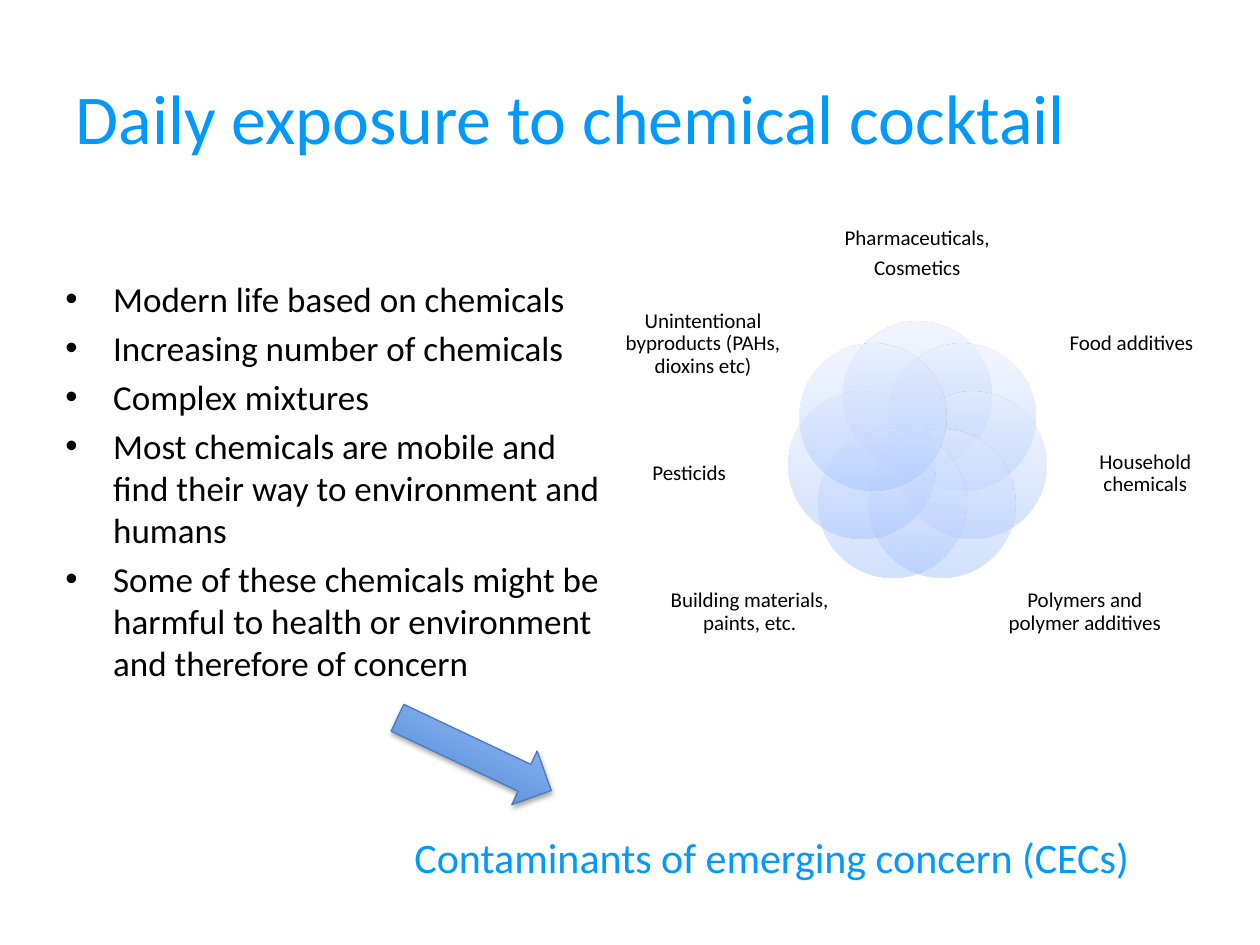
from dataclasses import dataclass
from math import cos, radians, sin

from lxml.etree import SubElement
from pptx import Presentation
from pptx.dml.color import RGBColor
from pptx.enum.shapes import MSO_SHAPE as Shape
from pptx.enum.text import MSO_ANCHOR as Anchor, PP_ALIGN as Align
from pptx.oxml.ns import qn
from pptx.util import Inches, Pt


@dataclass(frozen=True)
class Theme:
    """Colours, font and type sizes of the slide."""
    font: str = "Calibri"
    accent: str = "0099FF"
    ink: str = "000000"
    arrow_line: str = "4B7EBC"
    petal_stops: tuple = ((0, "A4C4FF"), (35, "BFD4FF"), (100, "E6EEFF"))
    arrow_stops: tuple = ((0, "3F80CE"), (100, "A4C4FF"))
    title: int = 40
    caption: int = 24
    body: int = 20
    label: int = 12


THEME = Theme()
POINTS = [
    "Modern life based on chemicals",
    "Increasing number of chemicals",
    "Complex mixtures",
    "Most chemicals are mobile and find their way to environment and humans",
    "Some of these chemicals might be harmful to health or environment "
    "and therefore of concern",
]
SOURCES = [
    (["Pharmaceuticals,", "Cosmetics"], 0, 0.36, 1.34, 0.72),
    (["Food additives"], 1.7, 1.08, 1.27, 0.79),
    (["Household chemicals"], 1.81, 2.11, 1.24, 0.84),
    (["Polymers and polymer additives"], 1.33, 3.21, 1.34, 0.77),
    (["Building materials, paints, etc."], -1.33, 3.21, 1.34, 0.77),
    (["Pesticids"], -1.81, 2.11, 1.24, 0.84),
    (["Unintentional byproducts (PAHs, dioxins etc)"], -1.7, 1.08, 1.27, 0.79),
]


def apply(target, values):
    """Set each named value on the target."""
    for name, value in values.items():
        setattr(target, name, value)


def place(shape, box):
    """Move and size a shape to a box in inches."""
    names = ("left", "top", "width", "height")
    apply(shape, dict(zip(names, map(Inches, box))))


def write(frame, lines, size, color, frame_format=None, line_format=None):
    """Write one paragraph per line and return the paragraphs."""
    apply(frame, {"word_wrap": True, **(frame_format or {})})
    frame.text = "\n".join(lines)
    for line in frame.paragraphs:
        apply(line, line_format or {})
        apply(line.font, {"name": THEME.font, "size": Pt(size)})
        line.font.color.rgb = RGBColor.from_string(color)
    return frame.paragraphs


def shade(shape, stops, opacity=100):
    """Fill a shape with a gradient that runs upwards."""
    shape.shadow.inherit = False
    shape.fill.gradient()
    shape.fill.gradient_angle = 90
    stop_list = next(shape._element.iter(qn("a:gsLst")))
    for old_stop in list(stop_list):
        stop_list.remove(old_stop)
    for position, color in stops:
        stop = SubElement(stop_list, qn("a:gs"), pos=str(position * 1000))
        tint = SubElement(stop, qn("a:srgbClr"), val=color)
        if opacity < 100:
            SubElement(tint, qn("a:alpha"), val=str(opacity * 1000))


def add_title(slide, box):
    """Place the slide title."""
    title = slide.shapes.title
    place(title, box)
    write(title.text_frame, ["Daily exposure to chemical cocktail"],
          THEME.title, THEME.accent, {"vertical_anchor": Anchor.MIDDLE},
          {"alignment": Align.LEFT})


def add_points(slide, box):
    """Place the bulleted arguments."""
    points = slide.shapes.add_textbox(*map(Inches, box))
    lines = write(points.text_frame, POINTS, THEME.body, THEME.ink)
    for index, line in enumerate(lines):
        properties = line._p.get_or_add_pPr()
        apply(line, {"space_before": Pt(4 if index else 0)})
        properties.set("marL", str(Inches(0.38)))
        properties.set("indent", str(Inches(-0.38)))
        SubElement(properties, qn("a:buFont"), typeface="Arial")
        SubElement(properties, qn("a:buChar"), char="•")


def add_cocktail(slide, box):
    """Place the ring of overlapping circles with a label for each."""
    left, top, width, _ = box
    axis, middle = left + width / 2, top + 2.3
    diameter, radius = 1.17, 0.45
    for index, (lines, across, down, label_width, label_height) in enumerate(SOURCES):
        angle = radians(360 / len(SOURCES) * index)
        petal_box = (axis + radius * sin(angle) - diameter / 2,
                     middle - radius * cos(angle) - diameter / 2,
                     diameter, diameter)
        petal = slide.shapes.add_shape(Shape.OVAL, *map(Inches, petal_box))
        shade(petal, THEME.petal_stops, opacity=50)
        petal.line.fill.background()

        label_box = (axis + across - label_width / 2,
                     top + 0.36 + down - label_height / 2,
                     label_width, label_height)
        label = slide.shapes.add_textbox(*map(Inches, label_box))
        margins = dict.fromkeys(
            ("margin_left", "margin_top", "margin_right", "margin_bottom"), 0)
        write(label.text_frame, lines, THEME.label, THEME.ink,
              {"vertical_anchor": Anchor.MIDDLE, **margins},
              {"alignment": Align.CENTER, "line_spacing": 0.9,
               "space_after": Pt(4.2)})


def add_arrow(slide, box):
    """Place the tilted arrow that leads to the conclusion."""
    arrow = slide.shapes.add_shape(Shape.RIGHT_ARROW, *map(Inches, box))
    arrow.rotation = 25.3
    shade(arrow, THEME.arrow_stops)
    arrow.line.color.rgb = RGBColor.from_string(THEME.arrow_line)
    arrow.line.width = Pt(0.75)
    effects = arrow._element.spPr.find(qn("a:effectLst"))
    shadow = SubElement(effects, qn("a:outerShdw"), blurRad=str(Pt(3.1)),
                        dist=str(Pt(1.8)), dir="5400000", rotWithShape="0")
    shadow_color = SubElement(shadow, qn("a:srgbClr"), val=THEME.ink)
    SubElement(shadow_color, qn("a:alpha"), val="35000")


def add_conclusion(slide, box):
    """Place the concluding term."""
    conclusion = slide.shapes.add_textbox(*map(Inches, box))
    write(conclusion.text_frame, ["Contaminants of emerging concern (CECs)"],
          THEME.caption, THEME.accent, {"vertical_anchor": Anchor.MIDDLE})


def main():
    """Build and save the slide."""
    deck = Presentation()
    apply(deck, {"slide_width": Inches(10), "slide_height": Inches(7.5)})
    slide = deck.slides.add_slide(deck.slide_layouts[5])
    add_title(slide, (0.5, 0.3, 9, 1.25))
    add_points(slide, (0.42, 2.15, 4.5, 3.57))
    add_cocktail(slide, (4.84, 1.29, 4.88, 3.95))
    add_arrow(slide, (3.09, 5.75, 1.35, 0.47))
    add_conclusion(slide, (3.19, 6.34, 6.11, 0.91))
    deck.save("out.pptx")


if __name__ == "__main__":
    main()
